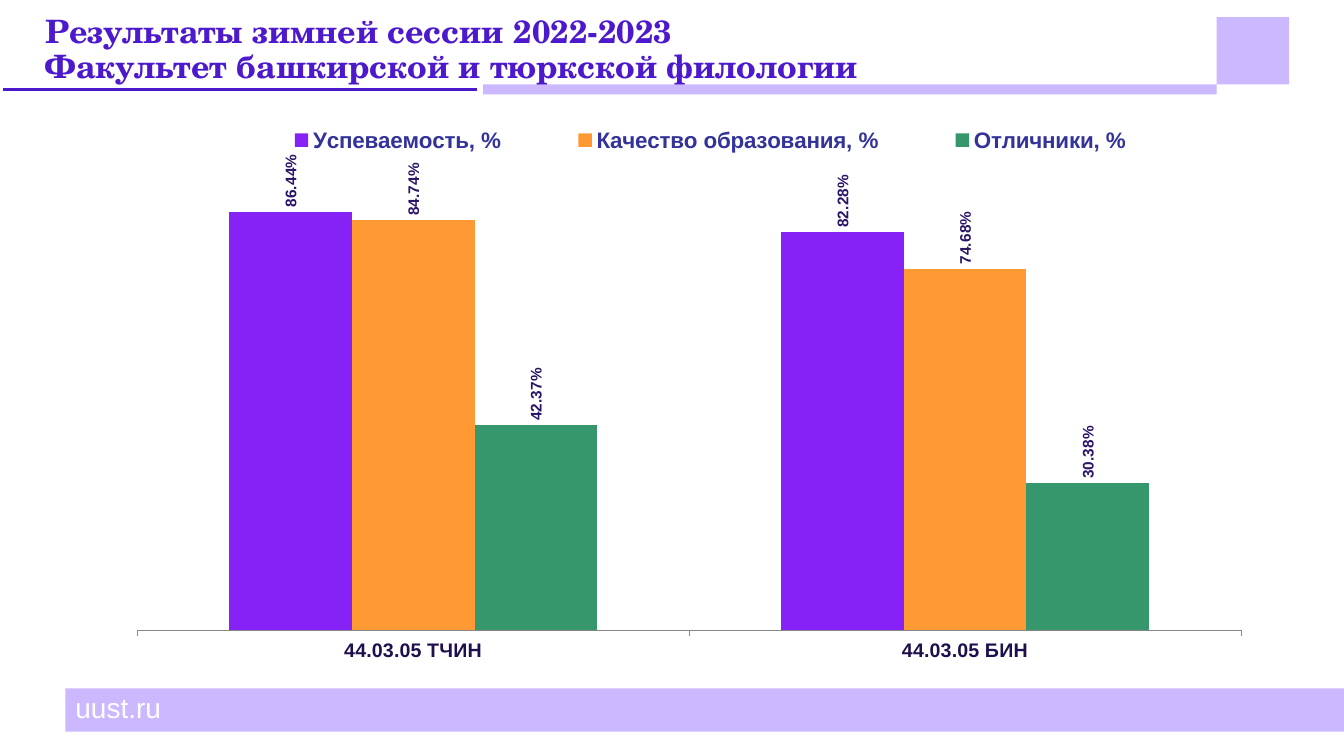
from dataclasses import dataclass
from typing import Any, Optional

from lxml import etree
from pptx import Presentation
from pptx import util as u
from pptx.chart import data as chart_data
from pptx.dml.color import RGBColor
from pptx.enum import chart as chart_enum
from pptx.enum import shapes, text
from pptx.oxml.ns import qn


@dataclass(frozen=True)
class Theme:
    violet: str = "4D19CC"
    lilac: str = "CBB8FF"
    white: str = "FFFFFF"
    chart_text: str = "2A1468"
    category_text: str = "1F0F4E"
    legend_text: str = "333399"
    axis_line: str = "878787"
    title_font: str = "TeX Gyre Schola"
    body_font: str = "Arial"
    title_size: int = 23
    footer_size: int = 20
    chart_size: int = 18
    legend_size: int = 16
    category_size: int = 14
    label_size: int = 11


@dataclass(frozen=True)
class Box:
    """Position and size in centimetres."""
    left: float
    top: float
    width: float
    height: float

    def lengths(self) -> tuple:
        return tuple(u.Cm(n) for n in (self.left, self.top, self.width, self.height))


@dataclass(frozen=True)
class Band:
    box: Box
    fill: str
    outline: Optional[str] = None


@dataclass(frozen=True)
class Measure:
    name: str
    values: tuple
    color: str


THEME = Theme()
PERCENT = "0.00%"
BANDS = (
    Band(Box(0, 2.13, 30.66, 0.25), THEME.lilac),
    Band(Box(1.65, 17.35, 32.22, 1.09), THEME.lilac),
    Band(Box(0, 2.13, 12.09, 0.25), THEME.violet, THEME.white),
    Band(Box(30.66, 0.43, 1.83, 1.7), THEME.lilac),
)
PROGRAMMES = ("44.03.05 ТЧИН", "44.03.05 БИН")
MEASURES = (
    Measure("Успеваемость, %", (0.8644, 0.8228), "8722F6"),
    Measure("Качество образования, %", (0.8474, 0.7468), "FF9933"),
    Measure("Отличники, %", (0.4237, 0.3038), "35976B"),
)


def style_font(font: Any, size: int, color: str, bold: bool = False,
               name: str = THEME.body_font) -> None:
    font.name = name
    font.size = u.Pt(size)
    font.bold = bold
    font.color.rgb = RGBColor.from_string(color)


def add_band(slide: Any, band: Band) -> None:
    shape = slide.shapes.add_shape(shapes.MSO_SHAPE.RECTANGLE, *band.box.lengths())
    shape.shadow.inherit = False
    shape.fill.solid()
    shape.fill.fore_color.rgb = RGBColor.from_string(band.fill)
    if band.outline:
        shape.line.color.rgb = RGBColor.from_string(band.outline)
        shape.line.width = u.Pt(4.5)
    else:
        shape.line.fill.background()


def add_text(slide: Any, box: Box, content: str, *, anchor: Any, **font_format: Any) -> None:
    frame = slide.shapes.add_textbox(*box.lengths()).text_frame
    frame.word_wrap = True
    frame.vertical_anchor = anchor
    paragraph = frame.paragraphs[0]
    paragraph.text = content.replace("\n", "\v")
    paragraph.line_spacing = 0.9
    for run in paragraph.runs:
        style_font(run.font, **font_format)


def set_layout(element: Any, index: int, inner: bool = False, **fractions: float) -> None:
    """Fix a chart part at fractions (x, y, w, h) of the chart area."""
    for old_layout in element.findall(qn("c:layout")):
        element.remove(old_layout)
    layout = etree.Element(qn("c:layout"))
    manual = etree.SubElement(layout, qn("c:manualLayout"))
    settings = {"layoutTarget": "inner"} if inner else {}
    settings.update(xMode="edge", yMode="edge", **fractions)
    for tag, value in settings.items():
        etree.SubElement(manual, qn(f"c:{tag}")).set("val", str(value))
    element.insert(index, layout)


def style_series(series: Any, measure: Measure) -> None:
    series.format.fill.solid()
    series.format.fill.fore_color.rgb = RGBColor.from_string(measure.color)
    series.invert_if_negative = False
    labels = series.data_labels
    labels.show_value = True
    labels.position = chart_enum.XL_LABEL_POSITION.OUTSIDE_END
    labels.number_format = PERCENT
    labels.number_format_is_linked = False
    style_font(labels.font, THEME.label_size, THEME.chart_text, bold=True)
    for body in labels._element.iter(qn("a:bodyPr")):
        body.set("rot", "-5400000")
        body.set("vert", "horz")


def add_results_chart(slide: Any, box: Box) -> None:
    results = chart_data.CategoryChartData(number_format=PERCENT)
    results.categories = PROGRAMMES
    for measure in MEASURES:
        results.add_series(measure.name, measure.values)
    chart = slide.shapes.add_chart(
        chart_enum.XL_CHART_TYPE.COLUMN_CLUSTERED, *box.lengths(), results).chart
    style_font(chart.font, THEME.chart_size, THEME.chart_text)
    chart.has_title = False

    plot = chart.plots[0]
    plot.vary_by_categories = False
    plot.gap_width = 150
    plot.overlap = 0
    for series, measure in zip(plot.series, MEASURES):
        style_series(series, measure)

    value_axis = chart.value_axis
    value_axis.minimum_scale = 0
    value_axis.maximum_scale = 1
    value_axis.has_major_gridlines = False
    value_axis.tick_labels.number_format = PERCENT
    value_axis.tick_labels.number_format_is_linked = False
    value_axis.visible = False

    category_axis = chart.category_axis
    category_axis.major_tick_mark = chart_enum.XL_TICK_MARK.OUTSIDE
    category_axis.format.line.color.rgb = RGBColor.from_string(THEME.axis_line)
    category_axis.format.line.width = u.Pt(0.75)
    style_font(category_axis.tick_labels.font, THEME.category_size,
               THEME.category_text, bold=True)

    chart.has_legend = True
    legend = chart.legend
    legend.position = chart_enum.XL_LEGEND_POSITION.RIGHT
    legend.include_in_layout = False
    style_font(legend.font, THEME.legend_size, THEME.legend_text, bold=True)

    plot_area = chart._chartSpace.find(f".//{qn('c:plotArea')}")
    set_layout(plot_area, 0, inner=True, x=0.017, y=0.041, w=0.921, h=0.889)
    set_layout(legend._element, 1, x=0.09, y=0, w=0.81, h=0.06)


def main() -> None:
    presentation = Presentation()
    presentation.slide_width = u.Cm(33.87)
    presentation.slide_height = u.Cm(19.05)
    slide = presentation.slides.add_slide(presentation.slide_layouts[6])
    for band in BANDS:
        add_band(slide, band)
    add_text(slide, Box(1.65, 17.35, 3.96, 1.07), "uust.ru",
             anchor=text.MSO_ANCHOR.MIDDLE, size=THEME.footer_size, color=THEME.white)
    add_text(slide, Box(0.91, 0.28, 22.5, 1.17),
             "Результаты зимней сессии 2022-2023\nФакультет башкирской и тюркской филологии",
             anchor=text.MSO_ANCHOR.TOP, size=THEME.title_size, color=THEME.violet,
             bold=True, name=THEME.title_font)
    add_results_chart(slide, Box(2.95, 3.12, 30.2, 13.72))
    presentation.save("out.pptx")


if __name__ == "__main__":
    main()
